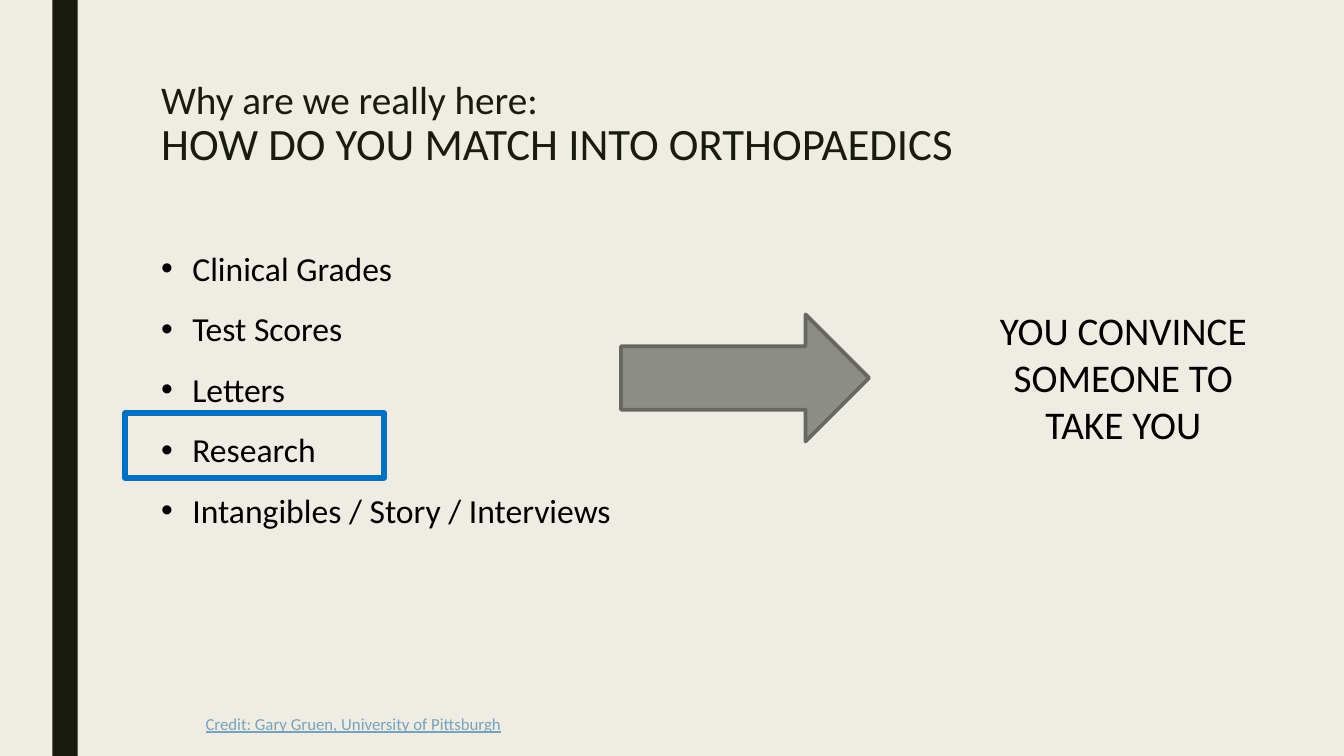
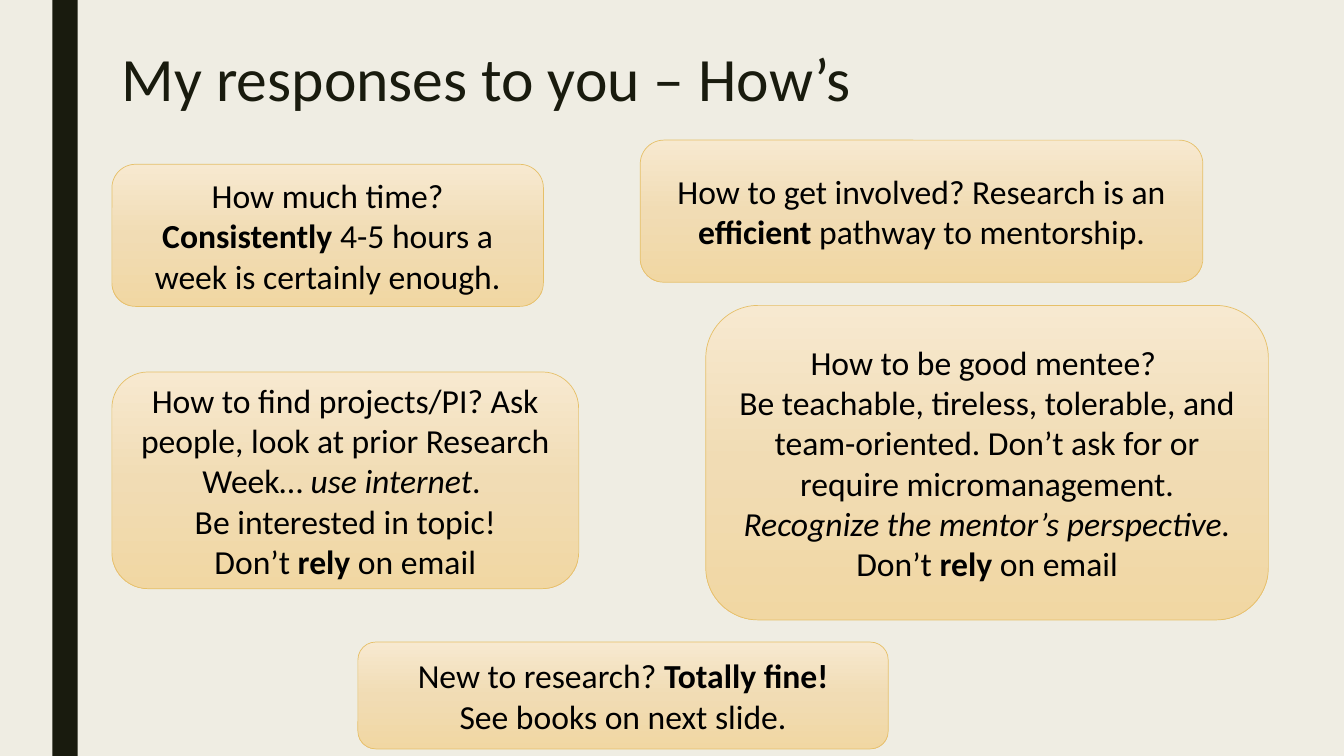
import pptx
import pptx.util
import pptx.dml.color
import pptx.enum.shapes
import pptx.enum.text
import pptx.oxml.ns
import lxml.etree

Inches = pptx.util.Inches
Pt = pptx.util.Pt
SHAPE = pptx.enum.shapes.MSO_SHAPE
ALIGN = pptx.enum.text.PP_ALIGN
ANCHOR = pptx.enum.text.MSO_ANCHOR
qn = pptx.oxml.ns.qn

FONT = "Calibri"
PAPER = "EFEDE3"
DARK = "191B0E"
BLACK = "000000"
BLUE = "0070C0"
LINK = "77A2BB"
GRAY = "8C8D86"
EDGE = "686863"
GOLD = "E6C069"
FADE = [(0, "F7E9D0"), (50, "F1DCB4"), (100, "F1D7A3")]


def color(code):
    return pptx.dml.color.RGBColor.from_string(code)


def write(para, runs, size, ink=BLACK):
    """Add (text, style) runs; style holds b, i or u, and a newline breaks the line."""
    for text, style in runs:
        for num, part in enumerate(text.split("\n")):
            if num:
                para.add_line_break()
            if not part:
                continue
            run = para.add_run()
            run.text = part
            font = run.font
            font.name = FONT
            font.size = Pt(size)
            font.color.rgb = color(ink)
            font.bold = "b" in style
            font.italic = "i" in style
            font.underline = "u" in style


def paras(frame, count):
    """Return the given number of paragraphs of an empty frame."""
    return [frame.paragraphs[0]] + [frame.add_paragraph() for _ in range(count - 1)]


def box(slide, place, wrap=True):
    frame = slide.shapes.add_textbox(*map(Inches, place)).text_frame
    frame.word_wrap = wrap
    return frame


def shape(slide, kind, place, fill=None, line=None, width=1):
    item = slide.shapes.add_shape(kind, *map(Inches, place))
    item.shadow.inherit = False
    if fill:
        item.fill.solid()
        item.fill.fore_color.rgb = color(fill)
    else:
        item.fill.background()
    if line:
        item.line.color.rgb = color(line)
        item.line.width = Pt(width)
    else:
        item.line.fill.background()
    return item


def page(deck):
    """Add a slide with the shared background and dark band."""
    slide = deck.slides.add_slide(deck.slide_layouts[6])
    slide.background.fill.solid()
    slide.background.fill.fore_color.rgb = color(PAPER)
    shape(slide, SHAPE.RECTANGLE, (0.52, 0, 0.25, 7.5), DARK)
    return slide


def title(slide, place, lines):
    """Write (text, size) lines as one title paragraph."""
    para = box(slide, place).paragraphs[0]
    para.line_spacing = 0.89
    for text, size in lines:
        write(para, [(text, "")], size, DARK)


def bullets(slide, place, items):
    frame = box(slide, place)
    for para, text in zip(paras(frame, len(items)), items):
        para.line_spacing = 1.5
        props = para._p.get_or_add_pPr()
        props.set("marL", str(Inches(0.31)))
        props.set("indent", str(-Inches(0.31)))
        font = lxml.etree.SubElement(props, qn("a:buFont"))
        font.set("typeface", "Arial")
        lxml.etree.SubElement(props, qn("a:buChar")).set("char", "•")
        write(para, [(text, "")], 24)


def fade(item):
    """Fill a shape with the gold gradient from top to bottom."""
    item.fill.gradient()
    item.fill.gradient_angle = 270
    stops = item._element.spPr.find(".//" + qn("a:gsLst"))
    for old in list(stops):
        stops.remove(old)
    for spot, code in FADE:
        stop = lxml.etree.SubElement(stops, qn("a:gs"))
        stop.set("pos", str(spot * 1000))
        lxml.etree.SubElement(stop, qn("a:srgbClr")).set("val", code)


def card(slide, place, texts):
    item = shape(slide, SHAPE.ROUNDED_RECTANGLE, place, line=GOLD, width=0.5)
    fade(item)
    frame = item.text_frame
    frame.word_wrap = True
    frame.vertical_anchor = ANCHOR.MIDDLE
    for para, runs in zip(paras(frame, len(texts)), texts):
        para.alignment = ALIGN.CENTER
        write(para, runs, 24)


def match(deck):
    slide = page(deck)
    title(slide, (1.5, 0.75, 10.5, 1.62), [
        ("Why are we really here: \n", 28),
        ("HOW DO YOU MATCH INTO ORTHOPAEDICS", 32)])
    bullets(slide, (1.5, 2.21, 4.94, 3.07), [
        "Clinical Grades", "Test Scores", "Letters", "Research",
        "Intangibles / Story / Interviews"])
    credit = box(slide, (1.94, 7.03, 3.16, 0.3), wrap=False)
    write(credit.paragraphs[0],
          [("Credit: Gary Gruen, University of Pittsburgh", "u")], 12, LINK)
    shape(slide, SHAPE.RIGHT_ARROW, (6.16, 3.12, 2.46, 1.26), GRAY, EDGE, 2.75)
    goal = box(slide, (9.6, 2.99, 3.08, 1.51)).paragraphs[0]
    goal.alignment = ALIGN.CENTER
    write(goal, [("YOU CONVINCE SOMEONE TO TAKE YOU", "")], 28)
    shape(slide, SHAPE.RECTANGLE, (1.24, 4.1, 2.57, 0.64), line=BLUE, width=4)


def replies(deck):
    slide = page(deck)
    title(slide, (1.11, 0.44, 11.78, 1.62), [("My responses to you – How’s", 44)])
    email = [("Don’t ", ""), ("rely", "b"), (" on email", "")]
    cards = [
        ((1.11, 1.63, 4.28, 1.41), [
            [("How much time? ", ""), ("Consistently", "b"),
             (" 4-5 hours a week is certainly enough.", "")]]),
        ((6.35, 1.39, 5.58, 1.41), [
            [("How to get involved? Research is an ", ""), ("efficient", "b"),
             (" pathway to mentorship.", "")]]),
        ((1.11, 3.69, 4.63, 2.15), [
            [("How to find projects/PI? Ask people, look at prior Research Week… ", ""),
             ("use internet", "i"), (". \nBe interested in topic!", "")],
            email]),
        ((7, 3.03, 5.58, 3.12), [
            [("How to be good mentee? ", "")],
            [("Be teachable, tireless, tolerable, and team-oriented. "
              "Don’t ask for or require micromanagement.", "")],
            [("Recognize the mentor’s perspective.", "i")],
            email]),
        ((3.55, 6.37, 5.26, 1.06), [
            [("New to research? ", ""), ("Totally fine!", "b")],
            [("See books on next slide.", "")]]),
    ]
    for place, texts in cards:
        card(slide, place, texts)


def main():
    deck = pptx.Presentation()
    deck.slide_width = Inches(13.33)
    deck.slide_height = Inches(7.5)
    match(deck)
    replies(deck)
    deck.save("out.pptx")


if __name__ == "__main__":
    main()
